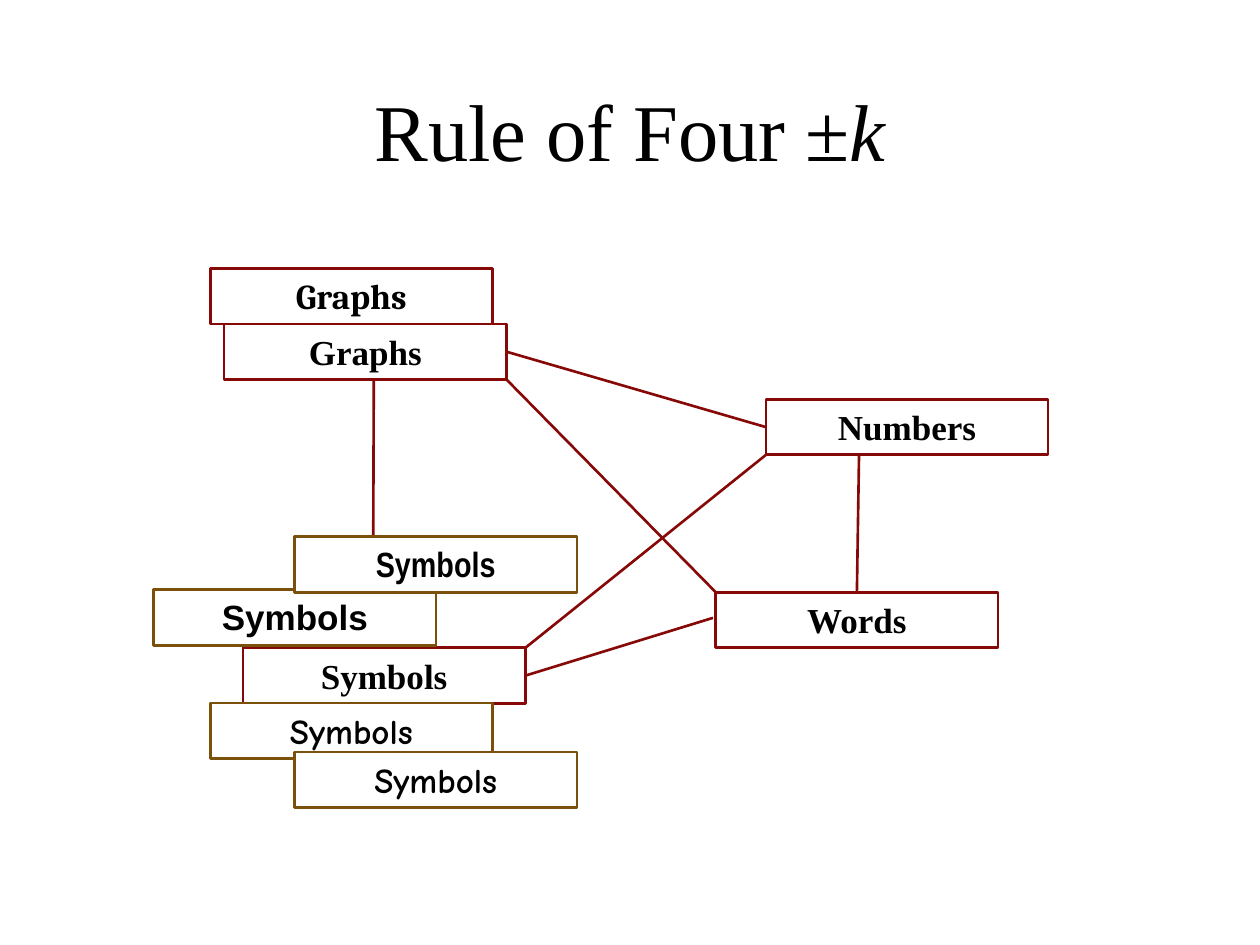
from lxml import etree
from pptx import Presentation
from pptx.dml.color import RGBColor
from pptx.enum.shapes import MSO_CONNECTOR, MSO_SHAPE
from pptx.enum.text import MSO_ANCHOR, MSO_AUTO_SIZE, PP_ALIGN
from pptx.oxml.ns import qn
from pptx.util import Cm, Pt

RED, BROWN, BLACK, WHITE = "860908", "7A500A", "000000", "FFFFFF"
SERIF = "Times New Roman"
WIDE, HIGH = 5.69, 1.12  # size of every label, in cm

# Label: text, left, top (cm within the diagram)
MAIN = {
    "graphs": ("Graphs", 1.42, 1.12),
    "numbers": ("Numbers", 12.34, 2.64),
    "words": ("Words", 11.33, 6.53),
    "symbols": ("Symbols", 1.8, 7.65),
}
# Link: label and the share of its width and height, for both ends
LINKS = [
    ("graphs", 0.53, 1, "symbols", 0.46, 0),
    ("numbers", 0.33, 1, "words", 0.5, 0),
    ("symbols", 1, 0, "numbers", 0, 1),
    ("symbols", 1, 0.5, "words", -0.01, 0.46),
    ("graphs", 1, 0.5, "numbers", 0, 0.5),
    ("graphs", 1, 1, "words", 0, 0),
]
# Extra labels: text, left, top, font, line colour
EXTRA = [
    ("Symbols", 0, 6.48, "Arial", BROWN),
    ("Symbols", 1.14, 8.76, "Comic Neue", BROWN),
    ("Symbols", 2.84, 5.41, "Arial Narrow", BROWN),
    ("Symbols", 2.84, 9.75, "Comic Neue", BROWN),
    ("Graphs", 1.14, 0, "Cambria", RED),
]


def color(code):
    return RGBColor.from_string(code)


def style(item, values):
    for name, value in values.items():
        setattr(item, name, value)


def write(para, text, font, size, **more):
    run = para.add_run()
    run.text = text
    style(run.font, {"name": font, "size": Pt(size), **more})
    run.font.color.rgb = color(BLACK)


def stroke(line, code):
    line.color.rgb = color(code)
    line.width = Pt(1.5)


def title(slide, left, top, width, height):
    head = slide.shapes.title
    style(head, {"left": Cm(left), "top": Cm(top),
                 "width": Cm(width), "height": Cm(height)})
    head.text_frame.vertical_anchor = MSO_ANCHOR.MIDDLE
    para = head.text_frame.paragraphs[0]
    para.alignment = PP_ALIGN.CENTER
    write(para, "Rule of Four ±", SERIF, 46)
    write(para, "k", SERIF, 46, italic=True)


def label(slide, text, left, top, font=SERIF, edge=RED):
    box = slide.shapes.add_shape(MSO_SHAPE.RECTANGLE, Cm(left), Cm(top),
                                 Cm(WIDE), Cm(HIGH))
    box.shadow.inherit = False
    box.fill.solid()
    box.fill.fore_color.rgb = color(WHITE)
    stroke(box.line, edge)
    frame = box.text_frame
    style(frame, {"word_wrap": True, "vertical_anchor": MSO_ANCHOR.TOP,
                  "auto_size": MSO_AUTO_SIZE.SHAPE_TO_FIT_TEXT})
    para = frame.paragraphs[0]
    para.alignment = PP_ALIGN.CENTER
    write(para, text, font, 20, bold=True)


def link(slide, start, end):
    line = slide.shapes.add_connector(
        MSO_CONNECTOR.STRAIGHT, *map(Cm, start), *map(Cm, end))
    stroke(line.line, RED)
    etree.SubElement(line._element.spPr, qn("a:effectLst"))


def diagram(slide, left, top):
    def point(name, across, down):
        _, x, y = MAIN[name]
        return left + x + across * WIDE, top + y + down * HIGH

    def place(text, x, y, *look):
        label(slide, text, left + x, top + y, *look)

    # Links lie behind the labels
    for ends in LINKS:
        link(slide, point(*ends[:3]), point(*ends[3:]))
    # The four main labels, then their variants
    for item in [*MAIN.values(), *EXTRA]:
        place(*item)


def main():
    deck = Presentation()
    style(deck, {"slide_width": Cm(25.4), "slide_height": Cm(19.05)})
    slide = deck.slides.add_slide(deck.slide_layouts[5])
    title(slide, 2.54, 1.4, 20.32, 2.41)
    diagram(slide, 3.1, 5.41)
    deck.save("out.pptx")


if __name__ == "__main__":
    main()
